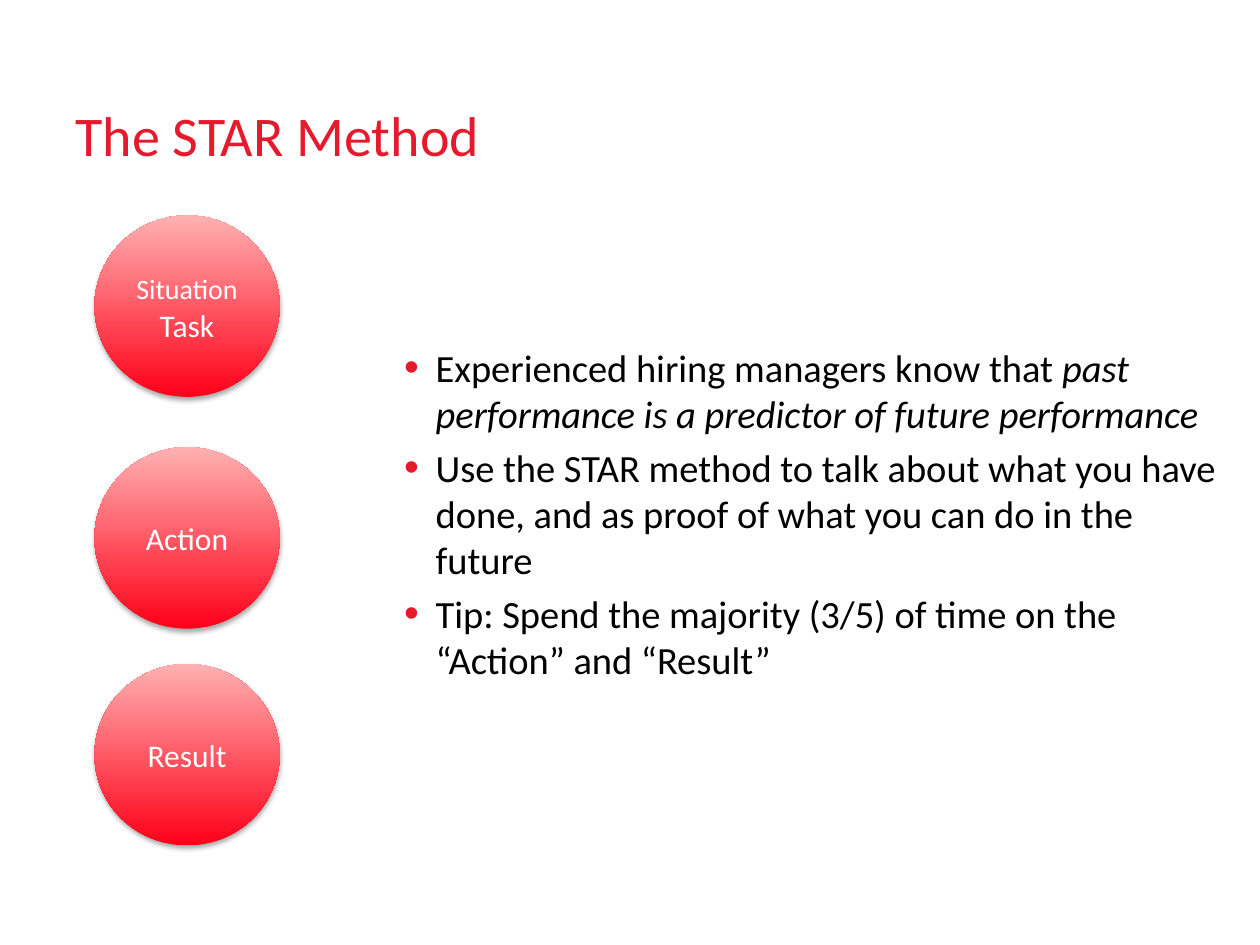
from dataclasses import dataclass

from lxml.etree import SubElement
from pptx import Presentation
from pptx.dml.color import RGBColor
from pptx.enum.shapes import MSO_SHAPE
from pptx.enum.text import MSO_ANCHOR, PP_ALIGN
from pptx.oxml.ns import qn
from pptx.util import Inches, Pt


@dataclass(frozen=True)
class Theme:
    font: str = "Calibri"
    accent: str = "E51A2D"
    body: str = "000000"
    on_circle: str = "FFFFFF"
    circle_bottom: str = "FF0018"
    circle_top: str = "FFB1B2"
    shadow: str = "000000"
    title_size: int = 32
    body_size: int = 22
    step_size: int = 18
    small_step_size: int = 16


THEME = Theme()
WIDTH, HEIGHT = Inches(10), Inches(7.5)

# Circle column, in percent of the slide's width and height
CIRCLE_LEFT, CIRCLE_WIDTH, CIRCLE_HEIGHT = 7.5, 14.7, 19.2
STEPS = [
    (22.8, [("Situation", THEME.small_step_size), (" Task", THEME.step_size)]),
    (47.33, [("Action", THEME.step_size)]),
    (70.27, [("Result", THEME.step_size)]),
]

# Each bullet is a list of (wording, italic)
BULLETS = [
    [("Experienced hiring managers know that ", False),
     ("past performance is a predictor of future performance", True)],
    [("Use the STAR method to talk about what you have done, "
      "and as proof of what you can do in the future", False)],
    [("Tip: Spend the majority (3/5) of time on the “Action” and “Result”", False)],
]


def place(left, top, width, height):
    """Turn percentages of the slide into lengths."""
    return (int(WIDTH * left / 100), int(HEIGHT * top / 100),
            int(WIDTH * width / 100), int(HEIGHT * height / 100))


def apply(target, values):
    for name, value in values.items():
        setattr(target, name, value)


def add_span(para, text, size, color, italic=False):
    span = para.add_run()
    span.text = text
    apply(span.font, {"name": THEME.font, "size": Pt(size), "italic": italic})
    span.font.color.rgb = RGBColor.from_string(color)


def add_text_box(page, area, anchor):
    frame = page.shapes.add_textbox(*place(*area)).text_frame
    apply(frame, {"word_wrap": True, "vertical_anchor": anchor})
    return frame


def add_title(page, text):
    para = add_text_box(page, (5, 1.73, 71.5, 16.67), MSO_ANCHOR.BOTTOM).paragraphs[0]
    para.line_spacing = Pt(34)
    add_span(para, text, THEME.title_size, THEME.accent)


def add_soft_shadow(shape):
    shape.shadow.inherit = False
    effects = shape._element.spPr.find(qn("a:effectLst"))
    shadow = SubElement(effects, qn("a:outerShdw"), blurRad=str(Pt(3.1)),
                        dist=str(Pt(1.8)), dir="5400000", rotWithShape="0")
    color = SubElement(shadow, qn("a:srgbClr"), val=THEME.shadow)
    SubElement(color, qn("a:alpha"), val="35000")


def add_step(page, top, spans):
    area = place(CIRCLE_LEFT, top, CIRCLE_WIDTH, CIRCLE_HEIGHT)
    circle = page.shapes.add_shape(MSO_SHAPE.OVAL, *area)
    circle.line.fill.background()
    circle.fill.gradient()
    circle.fill.gradient_angle = 90
    for stop, color in zip(circle.fill.gradient_stops,
                           (THEME.circle_bottom, THEME.circle_top)):
        stop.color.rgb = RGBColor.from_string(color)
    add_soft_shadow(circle)
    frame = circle.text_frame
    apply(frame, {"word_wrap": True, "vertical_anchor": MSO_ANCHOR.MIDDLE})
    para = frame.paragraphs[0]
    para.alignment = PP_ALIGN.CENTER
    for text, size in spans:
        add_span(para, text, size, THEME.on_circle)


def set_bullet(para):
    props = para._p.get_or_add_pPr()
    apply_indent = {"marL": Inches(0.25), "indent": -Inches(0.25)}
    for name, value in apply_indent.items():
        props.set(name, str(value))
    color = SubElement(props, qn("a:buClr"))
    SubElement(color, qn("a:srgbClr"), val=THEME.accent)
    SubElement(props, qn("a:buSzPct"), val="110000")
    SubElement(props, qn("a:buFont"), typeface="Arial")
    SubElement(props, qn("a:buChar"), char="•")


def add_bullets(page, bullets):
    frame = add_text_box(page, (31.1, 35.73, 66.6, 44), MSO_ANCHOR.TOP)
    for index, spans in enumerate(bullets):
        para = frame.add_paragraph() if index else frame.paragraphs[0]
        set_bullet(para)
        if index:
            para.space_before = Pt(0.2 * THEME.body_size)
        for text, italic in spans:
            add_span(para, text, THEME.body_size, THEME.body, italic)


def main():
    deck = Presentation()
    apply(deck, {"slide_width": WIDTH, "slide_height": HEIGHT})
    page = deck.slides.add_slide(deck.slide_layouts[6])

    # Heading
    add_title(page, "The STAR Method")

    # Steps of the method
    for top, spans in STEPS:
        add_step(page, top, spans)

    # Advice
    add_bullets(page, BULLETS)

    deck.save("out.pptx")


if __name__ == "__main__":
    main()
